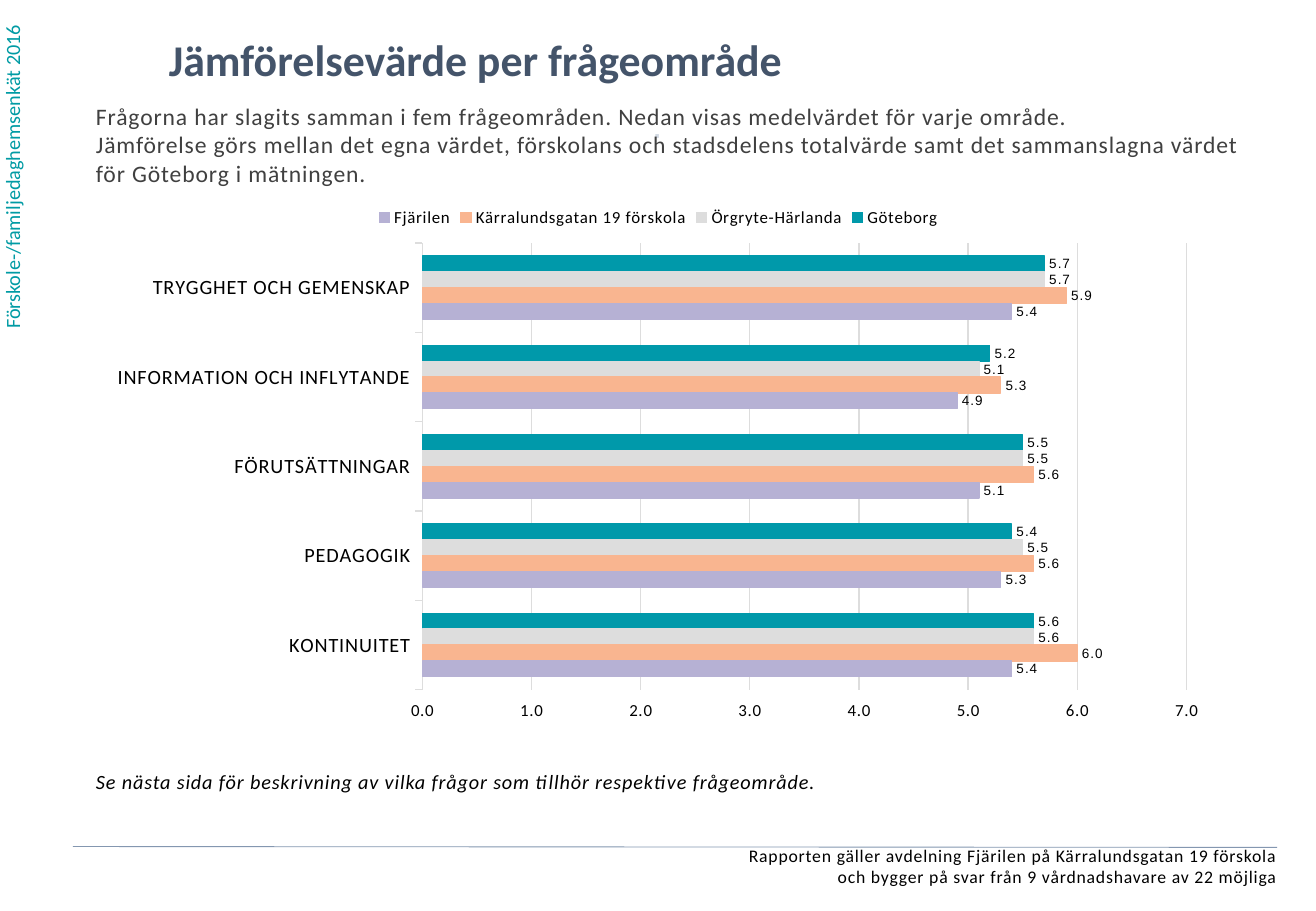
from lxml import etree
from pptx import Presentation
from pptx.chart.data import CategoryChartData
from pptx.dml.color import RGBColor
from pptx.enum.chart import (XL_CHART_TYPE, XL_LABEL_POSITION, XL_LEGEND_POSITION,
                             XL_TICK_LABEL_POSITION, XL_TICK_MARK)
from pptx.enum.shapes import MSO_CONNECTOR
from pptx.enum.text import PP_ALIGN
from pptx.oxml import parse_xml
from pptx.oxml.ns import nsdecls, qn
from pptx.util import Pt

TEAL_TEXT = RGBColor(0x00, 0x9B, 0xA4)
NAVY = RGBColor(0x44, 0x54, 0x6A)
DARK_GREY = RGBColor(0x40, 0x40, 0x40)
BLACK = RGBColor(0x00, 0x00, 0x00)
PALE_BLUE = RGBColor(0xD2, 0xD9, 0xE2)
RULE_BLUE = RGBColor(0x84, 0x97, 0xB0)
TEAL = RGBColor(0x00, 0x99, 0xAA)
LIGHT_GREY = RGBColor(0xDD, 0xDD, 0xDD)
PEACH = RGBColor(0xF9, 0xB5, 0x90)
LILAC = RGBColor(0xB6, 0xB1, 0xD4)

TRACKING = "50"
ONE_DECIMAL = "0.0;0.0"

AREAS = ["TRYGGHET OCH GEMENSKAP", "INFORMATION OCH INFLYTANDE",
         "FÖRUTSÄTTNINGAR", "PEDAGOGIK", "KONTINUITET"]
UNITS = [
    ("Göteborg", TEAL, (5.7, 5.2, 5.5, 5.4, 5.6)),
    ("Örgryte-Härlanda", LIGHT_GREY, (5.7, 5.1, 5.5, 5.5, 5.6)),
    ("Kärralundsgatan 19 förskola", PEACH, (5.9, 5.3, 5.6, 5.6, 6.0)),
    ("Fjärilen", LILAC, (5.4, 4.9, 5.1, 5.3, 5.4)),
]


def style_font(font, size, color, name="Calibri"):
    font.size = Pt(size)
    font.name = name
    font.color.rgb = color


def add_text(slide, box, text, size, color, bold=False, italic=False,
             align=PP_ALIGN.LEFT, tracked=True):
    """Place text without insets in box (left, top, width, height in points)."""
    frame = slide.shapes.add_textbox(*map(Pt, box)).text_frame
    frame.word_wrap = True
    frame.margin_left = frame.margin_right = 0
    frame.margin_top = frame.margin_bottom = 0
    frame.text = text
    for paragraph in frame.paragraphs:
        paragraph.alignment = align
        for run in paragraph.runs:
            style_font(run.font, size, color)
            run.font.bold = bold
            run.font.italic = italic
            if tracked:
                run.font._element.set("spc", TRACKING)
    return frame


def add_side_label(slide, box):
    frame = add_text(slide, box, "Förskole-/familjedaghemsenkät 2016", 12,
                     TEAL_TEXT, tracked=False)
    frame.margin_top = Pt(0.6)
    frame._element.find(qn("a:bodyPr")).set("vert", "vert270")


def add_heading(slide, box):
    left, top, width, height = box
    add_text(slide, (left + 43.2, top, 600.5, 41), "Jämförelsevärde per frågeområde",
             26, NAVY, bold=True, tracked=False)
    add_text(slide, (left + 221.8, top + 54, 221.8, 28), "⋅", 12, PALE_BLUE,
             bold=True, align=PP_ALIGN.CENTER)
    add_text(slide, (left, top + 41, width, height - 41),
             "Frågorna har slagits samman i fem frågeområden. "
             "Nedan visas medelvärdet för varje område.\n"
             "Jämförelse görs mellan det egna värdet, förskolans och stadsdelens "
             "totalvärde samt det sammanslagna värdet för Göteborg i mätningen.",
             14, DARK_GREY)


def set_plot_area(chart, x, y, w, h):
    """Fix the inner plot area as fractions of the chart."""
    plot_area = chart._chartSpace.chart.plotArea
    for layout in plot_area.findall(qn("c:layout")):
        plot_area.remove(layout)
    layout = parse_xml(f"<c:layout {nsdecls('c')}><c:manualLayout/></c:layout>")
    settings = [("layoutTarget", "inner"), ("xMode", "edge"), ("yMode", "edge"),
                ("x", x), ("y", y), ("w", w), ("h", h)]
    for tag, value in settings:
        etree.SubElement(layout[0], qn("c:" + tag)).set("val", str(value))
    plot_area.insert(0, layout)


def style_axes(chart):
    areas = chart.category_axis
    areas.reverse_order = True
    areas.major_tick_mark = XL_TICK_MARK.OUTSIDE
    areas.format.line.color.rgb = LIGHT_GREY
    areas.format.line.width = Pt(0.75)
    style_font(areas.tick_labels.font, 12, BLACK)

    scale = chart.value_axis
    scale.minimum_scale = 0
    scale.maximum_scale = 7
    scale.major_unit = 1
    scale.tick_label_position = XL_TICK_LABEL_POSITION.HIGH
    scale.format.line.fill.background()
    scale.major_gridlines.format.line.color.rgb = LIGHT_GREY
    scale.major_gridlines.format.line.width = Pt(0.75)
    scale.tick_labels.number_format = ONE_DECIMAL
    scale.tick_labels.number_format_is_linked = False
    style_font(scale.tick_labels.font, 10, BLACK)


def add_comparison_chart(slide, box):
    chart_data = CategoryChartData(number_format="0.0")
    chart_data.categories = AREAS
    for name, _, means in UNITS:
        chart_data.add_series(name, means)
    chart = slide.shapes.add_chart(XL_CHART_TYPE.BAR_CLUSTERED, *map(Pt, box),
                                   chart_data).chart
    style_font(chart.font, 10, BLACK)
    chart.has_title = False
    chart.has_legend = True
    chart.legend.position = XL_LEGEND_POSITION.TOP
    chart.legend.include_in_layout = False
    style_font(chart.legend.font, 10, BLACK)
    style_axes(chart)
    set_plot_area(chart, 0.29, 0.09, 0.68, 0.83)

    bars = chart.plots[0]
    bars.gap_width = 162
    bars.overlap = 0
    bars.vary_by_categories = False
    for unit, (_, color, _) in zip(bars.series, UNITS):
        unit.format.fill.solid()
        unit.format.fill.fore_color.rgb = color
        unit.format.line.color.rgb = color
        unit.format.line.width = Pt(0.75)
        labels = unit.data_labels
        labels.show_value = True
        labels.position = XL_LABEL_POSITION.OUTSIDE_END
        labels.number_format = ONE_DECIMAL
        labels.number_format_is_linked = False
        style_font(labels.font, 8, BLACK, "Arial")
    for properties in chart._chartSpace.iter(qn("a:defRPr")):
        properties.set("spc", TRACKING)


def add_footer(slide, box):
    left, top, width, height = box
    rule = slide.shapes.add_connector(MSO_CONNECTOR.STRAIGHT, Pt(left), Pt(top + 1),
                                      Pt(left + width), Pt(top + 1.5))
    rule.line.color.rgb = RULE_BLUE
    rule.line.width = Pt(0.5)
    etree.SubElement(rule._element.spPr, qn("a:effectLst"))
    add_text(slide, box,
             "Rapporten gäller avdelning Fjärilen på Kärralundsgatan 19 förskola\n"
             "och bygger på svar från 9 vårdnadshavare av 22 möjliga",
             10.5, BLACK, align=PP_ALIGN.RIGHT)


def main():
    presentation = Presentation()
    presentation.slide_width = Pt(780)
    presentation.slide_height = Pt(540)
    slide = presentation.slides.add_slide(presentation.slide_layouts[6])
    add_side_label(slide, (0, 0, 27, 195))
    add_heading(slide, (56.9, 19.3, 681, 95))
    add_comparison_chart(slide, (57.2, 115.4, 666, 319))
    add_text(slide, (56.9, 456, 666, 18),
             "Se nästa sida för beskrivning av vilka frågor som tillhör "
             "respektive frågeområde.", 12, BLACK, italic=True)
    add_footer(slide, (43.2, 500.8, 713.8, 31))
    presentation.save("out.pptx")


if __name__ == "__main__":
    main()
